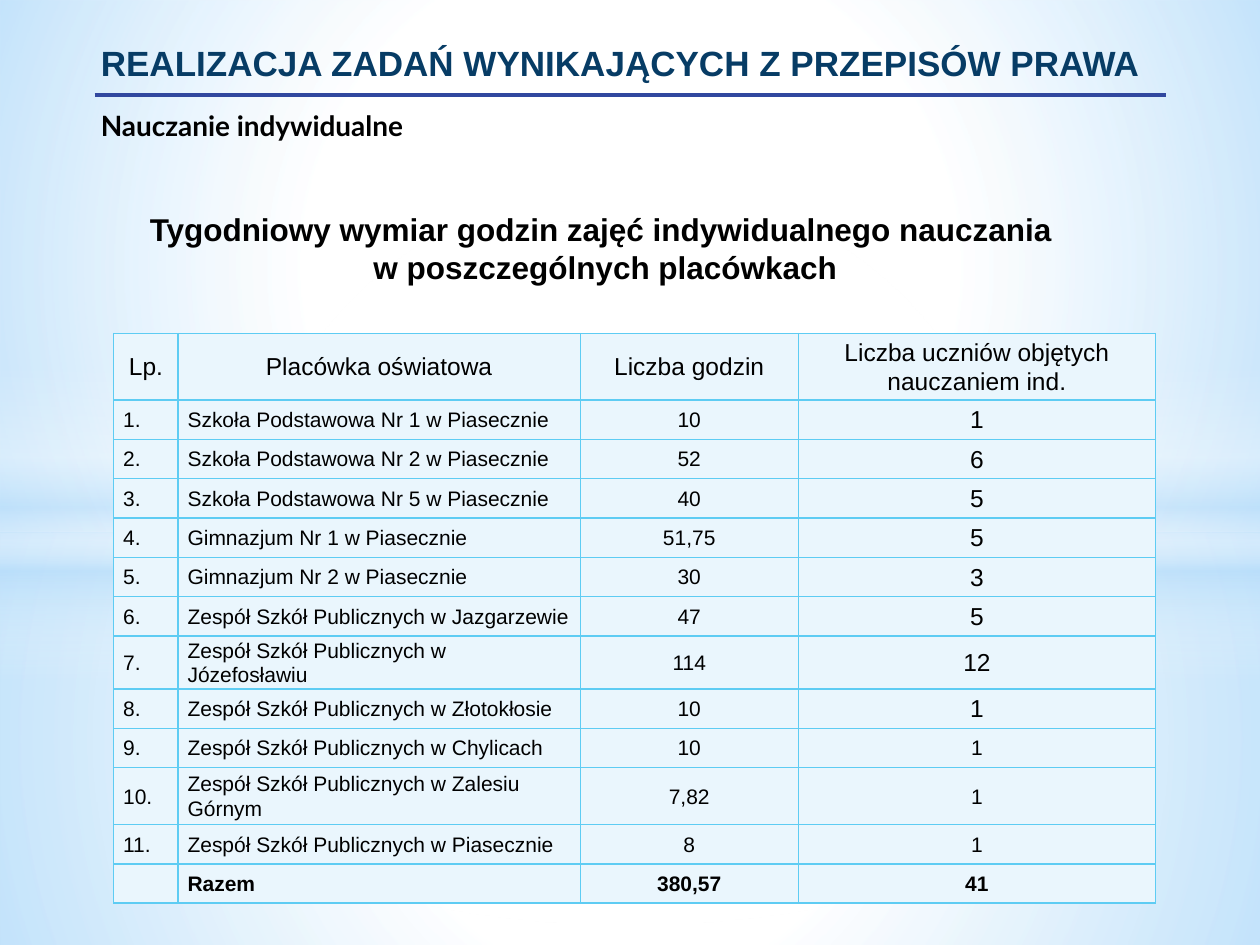
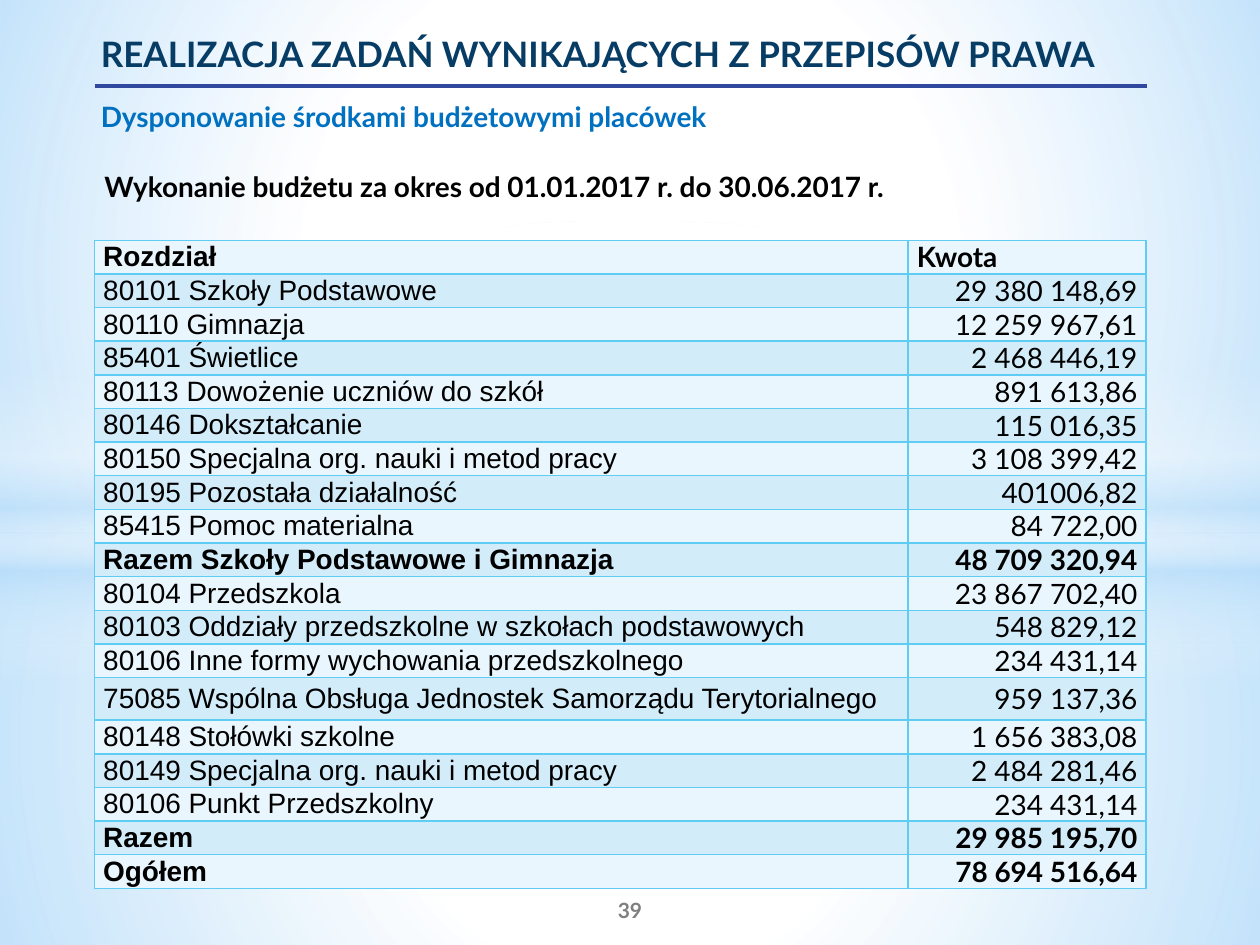
from lxml.etree import SubElement
from pptx import Presentation
from pptx.dml.color import RGBColor
from pptx.enum.shapes import MSO_CONNECTOR as Connector, MSO_SHAPE as Shape
from pptx.enum.text import MSO_ANCHOR as Anchor, MSO_AUTO_SIZE as AutoSize, PP_ALIGN as Align
from pptx.oxml import parse_xml
from pptx.oxml.ns import nsdecls, qn
from pptx.util import Pt

# Shared look
ARIAL, LATO = "Arial", "Lato"
BLACK, NAVY, BLUE, GREY = "000000", "073C65", "0070C0", "7F7F7F"
RULE, GRID = "31489F", "5ECCF3"
PALE, BAND = "EAF6FD", "D2ECFA"
WHITE, SKY = "FFFFFF", "B4DCFA"
HEADING = "REALIZACJA ZADAŃ WYNIKAJĄCYCH Z PRZEPISÓW PRAWA"

# Backdrop: preset, box, gradient stops (position, colour, opacity), radial or not
BACKDROP = [
    (Shape.RECTANGLE, (0, 304.56, 720, 235.44),
     [(0, WHITE, 91), (37, WHITE, 76), (100, SKY, 79)], True),
    (Shape.RECTANGLE, (0, 0, 720, 304.56),
     [(0, WHITE, 89), (48, WHITE, 62), (100, SKY, 79)], True),
    (Shape.RECTANGLE, (0, 208.8, 720, 180),
     [(0, WHITE, 0), (29, WHITE, 30), (45, SKY, 40), (55, WHITE, 26),
      (65, SKY, 60), (100, WHITE, 0)], False),
    (Shape.OVAL, (0, 126, 720, 401.76), [(0, WHITE, 100), (54, WHITE, 0)], True),
]

# Individual teaching: institution, hours, pupils
TEACHING_HEADER = ("Lp.", "Placówka oświatowa", "Liczba godzin",
                   "Liczba uczniów objętych nauczaniem ind.")
TEACHING = [
    ("Szkoła Podstawowa Nr 1 w Piasecznie", "10", "1"),
    ("Szkoła Podstawowa Nr 2 w Piasecznie", "52", "6"),
    ("Szkoła Podstawowa Nr 5 w Piasecznie", "40", "5"),
    ("Gimnazjum Nr 1 w Piasecznie", "51,75", "5"),
    ("Gimnazjum Nr 2 w Piasecznie", "30", "3"),
    ("Zespół Szkół Publicznych w Jazgarzewie", "47", "5"),
    ("Zespół Szkół Publicznych w Józefosławiu", "114", "12"),
    ("Zespół Szkół Publicznych w Złotokłosie", "10", "1"),
    ("Zespół Szkół Publicznych w Chylicach", "10", "1"),
    ("Zespół Szkół Publicznych w Zalesiu Górnym", "7,82", "1"),
    ("Zespół Szkół Publicznych w Piasecznie", "8", "1"),
]
TEACHING_TOTAL = ("", "Razem", "380,57", "41")
LAST_LARGE_ROW = 8  # pupil counts are set larger down to this row

# Budget: chapter, amount
BUDGET = [
    ("Rozdział", "Kwota"),
    ("80101 Szkoły Podstawowe", "29 380 148,69"),
    ("80110 Gimnazja", "12 259 967,61"),
    ("85401 Świetlice", "2 468 446,19"),
    ("80113 Dowożenie uczniów do szkół", "891 613,86"),
    ("80146 Dokształcanie", "115 016,35"),
    ("80150 Specjalna org. nauki i metod pracy", "3 108 399,42"),
    ("80195 Pozostała działalność", "401006,82"),
    ("85415 Pomoc materialna", "84 722,00"),
    ("Razem Szkoły Podstawowe i Gimnazja", "48 709 320,94"),
    ("80104 Przedszkola", "23 867 702,40"),
    ("80103 Oddziały przedszkolne w szkołach podstawowych", "548 829,12"),
    ("80106 Inne formy wychowania przedszkolnego", "234 431,14"),
    ("75085 Wspólna Obsługa Jednostek Samorządu Terytorialnego", "959 137,36"),
    ("80148 Stołówki szkolne", "1 656 383,08"),
    ("80149 Specjalna org. nauki i metod pracy", "2 484 281,46"),
    ("80106 Punkt Przedszkolny", "234 431,14"),
    ("Razem", "29 985 195,70"),
    ("Ogółem", "78 694 516,64"),
]
BUDGET_BOLD = ("Rozdział", "Razem", "Ogółem")


def rgb(color):
    return RGBColor.from_string(color)


def points(*lengths):
    return [Pt(length) for length in lengths]


def add_run(paragraph, text, font, size, color=BLACK, bold=False):
    run = paragraph.add_run()
    run.text = text
    run.font.name, run.font.size, run.font.bold = font, Pt(size), bold
    run.font.color.rgb = rgb(color)


def set_gradient(shape, stops, radial):
    fill = parse_xml(f'<a:gradFill {nsdecls("a")} rotWithShape="1"/>')
    stop_list = SubElement(fill, qn("a:gsLst"))
    for position, color, opacity in stops:
        stop = SubElement(stop_list, qn("a:gs"), pos=str(position * 1000))
        tone = SubElement(stop, qn("a:srgbClr"), val=color)
        SubElement(tone, qn("a:alpha"), val=str(opacity * 1000))
    if radial:
        circle = SubElement(fill, qn("a:path"), path="circle")
        SubElement(circle, qn("a:fillToRect"), dict.fromkeys("ltrb", "50000"))
    else:
        SubElement(fill, qn("a:lin"), ang="5400000", scaled="0")
    shape.fill.background()
    properties = shape.element.spPr
    properties.replace(properties.find(qn("a:noFill")), fill)


def move_backdrop_to_layout(slide):
    """Draw the backdrop once and hand it to the layout all slides share."""
    layout_tree = slide.slide_layout.shapes.element
    for order, (preset, box, stops, radial) in enumerate(BACKDROP):
        glow = slide.shapes.add_shape(preset, *points(*box))
        glow.shadow.inherit = False
        glow.line.fill.background()
        set_gradient(glow, stops, radial)
        glow.element.nvSpPr.cNvPr.set("id", str(100 + order))
        layout_tree.insert(2 + order, glow.element)


def add_heading(slide, top, font, topic, topic_color):
    title = slide.shapes.title
    title.left, title.top, title.width, title.height = points(36, top, 648, 62.64)
    frame = title.text_frame
    frame.word_wrap, frame.auto_size = True, AutoSize.NONE
    frame.vertical_anchor = Anchor.TOP
    heading, subheading = frame.paragraphs[0], frame.add_paragraph()
    subheading.space_before = Pt(14.4)
    for paragraph in (heading, subheading):
        paragraph.alignment = Align.LEFT
        paragraph._p.get_or_add_pPr().set("marL", str(Pt(14.4)))
    add_run(heading, HEADING, font, 20, NAVY, True)
    add_run(subheading, topic, LATO, 16, topic_color, True)


def add_rule(slide, y, right):
    rule = slide.shapes.add_connector(Connector.STRAIGHT, *points(54, y, right, y))
    rule.line.color.rgb, rule.line.width = rgb(RULE), Pt(2.25)
    SubElement(rule.element.spPr, qn("a:effectLst"))


def add_text(slide, box, lines, font, size, color=BLACK, align=Align.LEFT,
             anchor=Anchor.TOP, spacing=1.0):
    frame = slide.shapes.add_textbox(*points(*box)).text_frame
    frame.word_wrap, frame.vertical_anchor = True, anchor
    paragraph = frame.paragraphs[0]
    paragraph.alignment, paragraph.line_spacing = align, spacing
    for number, line in enumerate(lines):
        if number:
            paragraph.add_line_break()
        add_run(paragraph, line, font, size, color, True)


def add_grid(slide, left, top, widths, heights):
    frame = slide.shapes.add_table(len(heights), len(widths),
                                   *points(left, top, sum(widths), sum(heights)))
    grid = frame.table
    grid.first_row = grid.horz_banding = False
    for column, width in zip(grid.columns, widths):
        column.width = Pt(width)
    for row, height in zip(grid.rows, heights):
        row.height = Pt(height)
    return grid


def fill_cell(cell, text, font, size, fill, align, bold=False, inset=5.4, spacing=1.0):
    cell.fill.solid()
    cell.fill.fore_color.rgb = rgb(fill)
    cell.vertical_anchor = Anchor.MIDDLE
    cell.margin_left = cell.margin_right = Pt(inset)
    cell.margin_top = cell.margin_bottom = 0
    for order, side in enumerate(("lnL", "lnR", "lnT", "lnB")):
        cell._tc.tcPr.insert(order, parse_xml(
            f'<a:{side} {nsdecls("a")} w="{Pt(1)}"><a:solidFill>'
            f'<a:srgbClr val="{GRID}"/></a:solidFill></a:{side}>'))
    paragraph = cell.text_frame.paragraphs[0]
    paragraph.alignment, paragraph.line_spacing = align, spacing
    if text:
        add_run(paragraph, text, font, size, bold=bold)
    else:
        paragraph.font.size = Pt(size)


def add_teaching_table(slide):
    numbered = [(f"{number}.", *entry) for number, entry in enumerate(TEACHING, 1)]
    rows = [TEACHING_HEADER, *numbered, TEACHING_TOTAL]
    heights = [22.5] * len(rows)
    heights[0], heights[7], heights[10] = 38, 30.2, 32.5  # rows of two lines
    grid = add_grid(slide, 65, 190.6, (36.8, 229.8, 124.6, 204.2), heights)
    for r, row in enumerate(rows):
        for c, text in enumerate(row):
            large = r == 0 or (c == 3 and r <= LAST_LARGE_ROW)
            align = Align.CENTER if r == 0 or c >= 2 else Align.LEFT
            fill_cell(grid.cell(r, c), text, ARIAL, 14 if large else 12, PALE, align,
                      bold=row is TEACHING_TOTAL, spacing=1.05)


def add_budget_table(slide):
    heights = [19.2] * len(BUDGET)
    heights[13] = 24.4
    grid = add_grid(slide, 54, 137.3, (465, 136), heights)
    for r, (chapter, amount) in enumerate(BUDGET):
        fill = BAND if r % 2 else PALE
        bold = chapter.startswith(BUDGET_BOLD)
        amount_align = Align.RIGHT if r else Align.LEFT
        fill_cell(grid.cell(r, 0), chapter, ARIAL, 16, fill, Align.LEFT, bold, 5)
        fill_cell(grid.cell(r, 1), amount, LATO, 16, fill, amount_align, bold, 5)


def main():
    deck = Presentation()
    deck.slide_width, deck.slide_height = points(720, 540)
    title_only = deck.slide_layouts[5]

    # Individual teaching
    teaching = deck.slides.add_slide(title_only)
    move_backdrop_to_layout(teaching)
    add_text(teaching, (42.48, 116.64, 606.96, 51.12),
             ["Tygodniowy wymiar godzin zajęć indywidualnego nauczania ",
              "w poszczególnych placówkach"], ARIAL, 18, align=Align.CENTER)
    add_heading(teaching, 20.16, ARIAL, "Nauczanie indywidualne", BLACK)
    add_rule(teaching, 54.5, 666)
    add_teaching_table(teaching)

    # Budget of the institutions
    budget = deck.slides.add_slide(title_only)
    add_text(budget, (288, 505.44, 144, 28.8), ["39"], LATO, 12, GREY,
             Align.CENTER, Anchor.MIDDLE)
    add_heading(budget, 15.12, LATO, "Dysponowanie środkami budżetowymi placówek", BLUE)
    add_rule(budget, 49, 655.2)
    add_text(budget, (52.56, 92.16, 624.96, 27.36),
             ["Wykonanie budżetu za okres od 01.01.2017 r. do 30.06.2017 r."],
             LATO, 16, spacing=1.05)
    add_budget_table(budget)

    deck.save("out.pptx")


if __name__ == "__main__":
    main()
